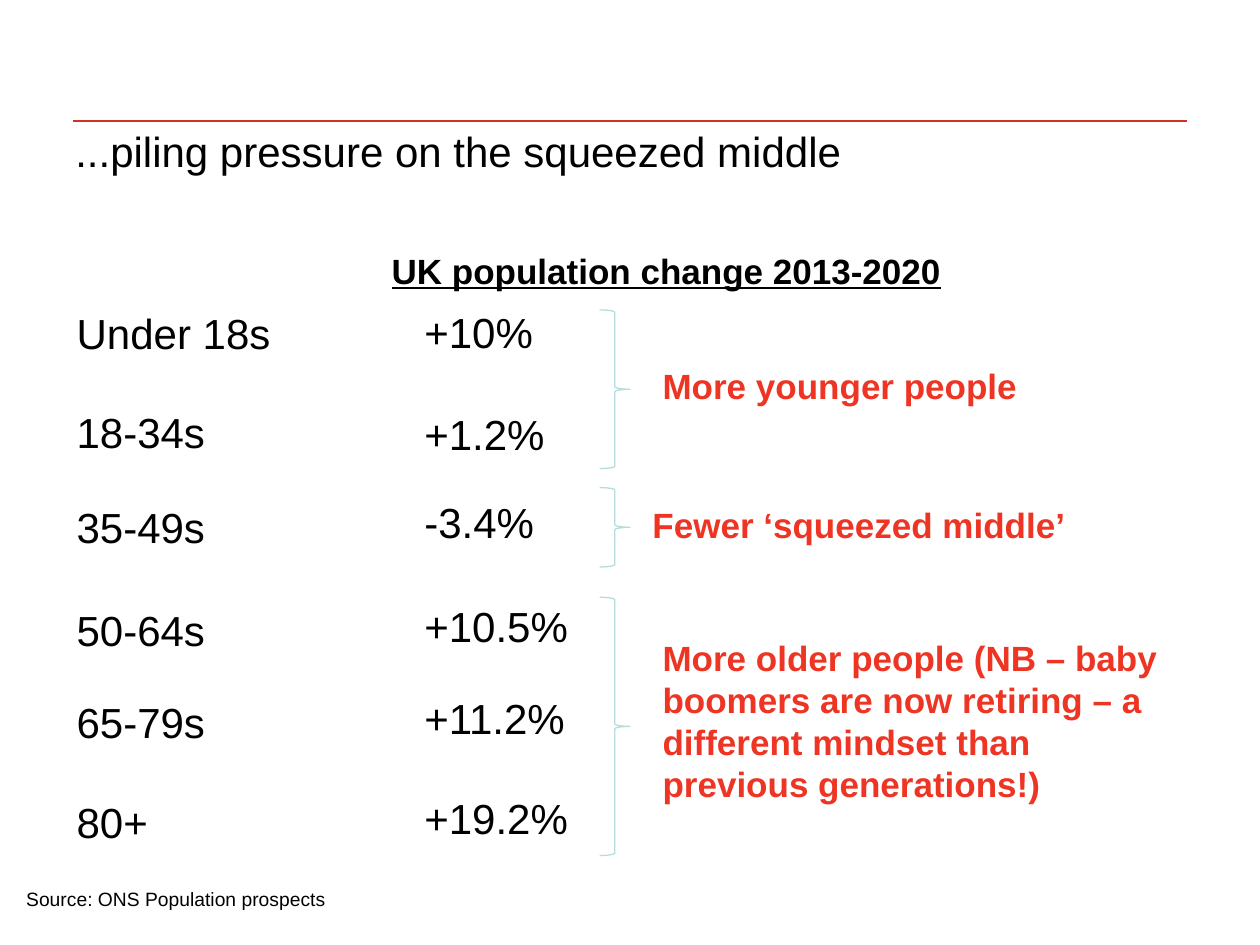
from lxml import etree
from pptx import Presentation
from pptx import util as u
from pptx.dml.color import RGBColor
from pptx.enum import shapes, text
from pptx.oxml.ns import qn

BLACK = RGBColor(0x00, 0x00, 0x00)
RED = RGBColor(0xEE, 0x35, 0x24)
RULE_RED = RGBColor(0xCD, 0x34, 0x25)
PALE_TEAL = RGBColor(0xB6, 0xDC, 0xDF)

CELL = u.Inches(0.1)
COLUMNS, ROWS = 100, 75
AGE_LEFT, CHANGE_LEFT, BRACE_LEFT = 5.1, 32.7, 47.6

AGE_GROUPS = [
    ("Under 18s", 23.9, "+10%", 23.8),
    ("18-34s", 31.8, "+1.2%", 31.9),
    ("35-49s", 39.3, "-3.4%", 38.9),
    ("50-64s", 47.5, "+10.5%", 47.2),
    ("65-79s", 54.8, "+11.2%", 54.5),
    ("80+", 62.7, "+19.2%", 62.4),
]

FINDINGS = [
    (24.6, 12.6, "More younger people", 51.6, 28.4, 4.4),
    (38.7, 6.3, "Fewer ‘squeezed middle’", 50.8, 39.5, 4.4),
    (47.4, 20.5, "More older people (NB – baby boomers are now retiring – "
     "a different mindset than previous generations!)", 51.6, 50, 14.5),
]


def cells(*counts):
    return [round(count * CELL) for count in counts]


def add_label(slide, wording, area, size, color=BLACK, bold=False,
              underline=False, wrap=True):
    shape = slide.shapes.add_textbox(*cells(*area))
    frame = shape.text_frame
    frame.word_wrap = wrap
    frame.vertical_anchor = text.MSO_ANCHOR.TOP
    paragraph = frame.paragraphs[0]
    paragraph.text = wording
    font = paragraph.font
    font.name = "Arial"
    font.size = u.Pt(size)
    font.bold = bold
    font.underline = underline
    font.color.rgb = color


def add_rule(slide, left, right, top):
    rule = slide.shapes.add_connector(
        shapes.MSO_CONNECTOR.STRAIGHT, *cells(left, top, right, top))
    rule.line.color.rgb = RULE_RED
    rule.line.width = u.Pt(0.75)
    etree.SubElement(rule._element.spPr, qn("a:effectLst"))


def add_brace(slide, top, height):
    brace = slide.shapes.add_shape(
        shapes.MSO_SHAPE.RIGHT_BRACE, *cells(BRACE_LEFT, top, 2.4, height))
    brace.shadow.inherit = False
    brace.fill.background()
    brace.line.color.rgb = PALE_TEAL
    brace.line.width = u.Pt(0.75)


def main():
    presentation = Presentation()
    presentation.slide_width, presentation.slide_height = cells(COLUMNS, ROWS)
    slide = presentation.slides.add_slide(presentation.slide_layouts[6])

    add_rule(slide, 5.8, 94.2, 9.6)
    add_label(slide, "...piling pressure on the squeezed middle",
              (5, 9.5, 90, 6), 24)
    add_label(slide, "UK population change 2013-2020", (30.1, 19.3, 46, 4.4),
              20, bold=True, underline=True, wrap=False)

    for age, age_top, change, change_top in AGE_GROUPS:
        add_label(slide, age, (AGE_LEFT, age_top, 23.6, 5), 24)
        add_label(slide, change, (CHANGE_LEFT, change_top, 23.6, 5), 24)

    for brace_top, brace_height, finding, left, top, height in FINDINGS:
        add_brace(slide, brace_top, brace_height)
        add_label(slide, finding, (left, top, 42.5, height), 20, RED, bold=True)

    add_label(slide, "Source: ONS Population prospects",
              (1.1, 69.9, 36.6, 4), 11)
    presentation.save("out.pptx")


if __name__ == "__main__":
    main()
